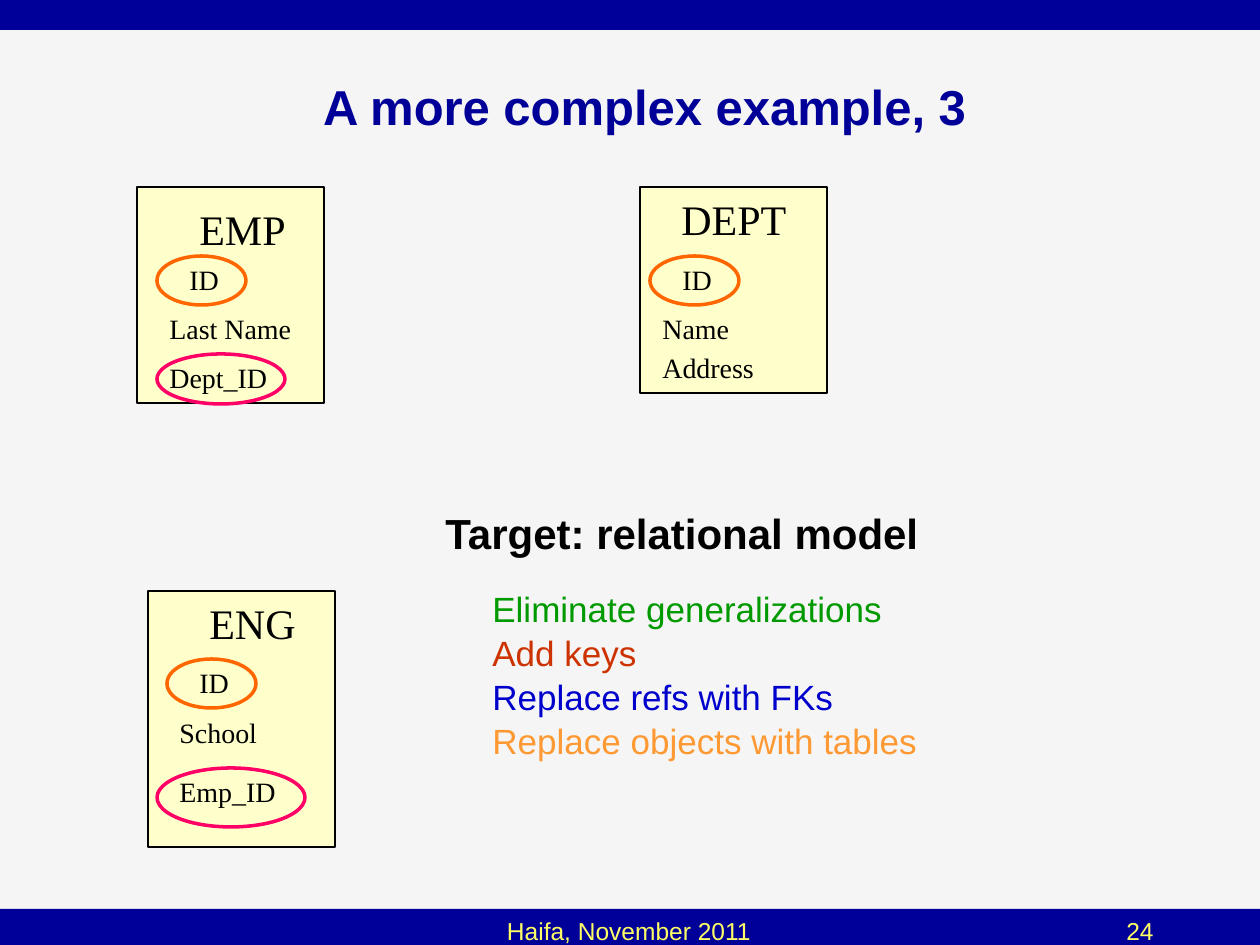
import pptx
import pptx.util
import pptx.dml.color
import pptx.enum.shapes
import pptx.enum.text
from dataclasses import dataclass

SHAPE = pptx.enum.shapes.MSO_SHAPE
ALIGN = pptx.enum.text.PP_ALIGN
ANCHOR = pptx.enum.text.MSO_ANCHOR


@dataclass(frozen=True)
class Theme:
    sans: str = "Arial"
    serif: str = "Times New Roman"
    background: str = "F5F5F5"
    navy: str = "000099"
    footer: str = "FFFF66"
    card: str = "FFFFCC"
    black: str = "000000"
    primary_key: str = "FF6600"
    foreign_key: str = "FF0066"
    green: str = "009900"
    red: str = "CC3300"
    blue: str = "0000CC"
    orange: str = "FF9933"
    title_size: int = 28
    heading_size: int = 24
    step_size: int = 20
    field_size: int = 16
    footer_size: int = 14


def px(n):
    return pptx.util.Emu(round(n * 914400 / 126))


def rgb(value):
    return pptx.dml.color.RGBColor.from_string(value)


class Deck:
    """Draws styled elements on the current slide."""

    def __init__(self, theme):
        self.theme = theme
        self.prs = pptx.Presentation()
        self.prs.slide_width, self.prs.slide_height = px(1260), px(945)
        self.s = self.prs.slides.add_slide(self.prs.slide_layouts[6])
        fill = self.s.background.fill
        fill.solid()
        fill.fore_color.rgb = rgb(theme.background)

    def shape(self, kind, x, y, w, h, fill=None, line=None, weight=0.75):
        sp = self.s.shapes.add_shape(kind, px(x), px(y), px(w), px(h))
        sp.shadow.inherit = False
        if fill:
            sp.fill.solid()
            sp.fill.fore_color.rgb = rgb(fill)
        else:
            sp.fill.background()
        if line:
            sp.line.color.rgb = rgb(line)
            sp.line.width = pptx.util.Pt(weight)
        else:
            sp.line.fill.background()

    def ring(self, x, y, w, h, color):
        self.shape(SHAPE.OVAL, x, y, w, h, line=color, weight=2)

    def text(self, x, y, w, h, lines, size, font, bold=False,
             align=ALIGN.LEFT, anchor=ANCHOR.TOP, gap=0):
        tf = self.s.shapes.add_textbox(px(x), px(y), px(w), px(h)).text_frame
        tf.word_wrap = True
        tf.vertical_anchor = anchor
        for i, (words, color) in enumerate(lines):
            p = tf.add_paragraph() if i else tf.paragraphs[0]
            p.text = words
            p.alignment = align
            p.space_after = pptx.util.Pt(gap)
            p.font.name = font
            p.font.size = pptx.util.Pt(size)
            p.font.bold = bold
            p.font.color.rgb = rgb(color)

    def entity(self, box, name, name_at, field_x, id_y, fields):
        t = self.theme
        self.shape(SHAPE.RECTANGLE, *box, t.card, t.black)
        self.text(*name_at, 150, 63, [(name, t.black)], t.heading_size, t.serif)
        for words, x, y in [("ID", field_x + 20, id_y)] + [(f, field_x, y) for f, y in fields]:
            self.text(x, y, 158, 47, [(words, t.black)], t.field_size, t.serif)
        self.ring(field_x, id_y, 89, 49, t.primary_key)


def main():
    t = Theme()
    d = Deck(t)
    d.shape(SHAPE.RECTANGLE, 0, 909, 1260, 36, t.navy)
    d.shape(SHAPE.RECTANGLE, 0, 0, 1260, 30, t.navy)

    d.entity((640, 187, 187, 206), "DEPT", (669, 187), 650, 256,
             [("Name", 305), ("Address", 344)])
    d.entity((137, 187, 187, 216), "EMP", (187, 197), 157, 256,
             [("Last Name", 305), ("Dept_ID", 354)])
    d.entity((148, 591, 187, 256), "ENG", (197, 591), 167, 659,
             [("School", 709), ("Emp_ID", 768)])
    d.ring(157, 354, 128, 50, t.foreign_key)
    d.ring(157, 768, 148, 59, t.foreign_key)

    d.text(54, 32, 1181, 147, [("A more complex example, 3", t.navy)],
           t.title_size, t.sans, True, ALIGN.CENTER, ANCHOR.MIDDLE)
    d.text(433, 501, 571, 63, [("Target: relational model", t.black)],
           t.heading_size, t.sans, True)
    steps = [
        ("Eliminate generalizations", t.green),
        ("Add keys", t.red),
        ("Replace refs with FKs", t.blue),
        ("Replace objects with tables", t.orange),
    ]
    d.text(480, 581, 593, 183, steps, t.step_size, t.sans, gap=1.2)

    d.text(272, 910, 714, 35, [("Haifa, November 2011", t.footer)],
           t.footer_size, t.sans, align=ALIGN.CENTER)
    d.text(997, 910, 169, 35, [("24", t.footer)],
           t.footer_size, t.sans, align=ALIGN.RIGHT)
    d.prs.save("out.pptx")


if __name__ == "__main__":
    main()
